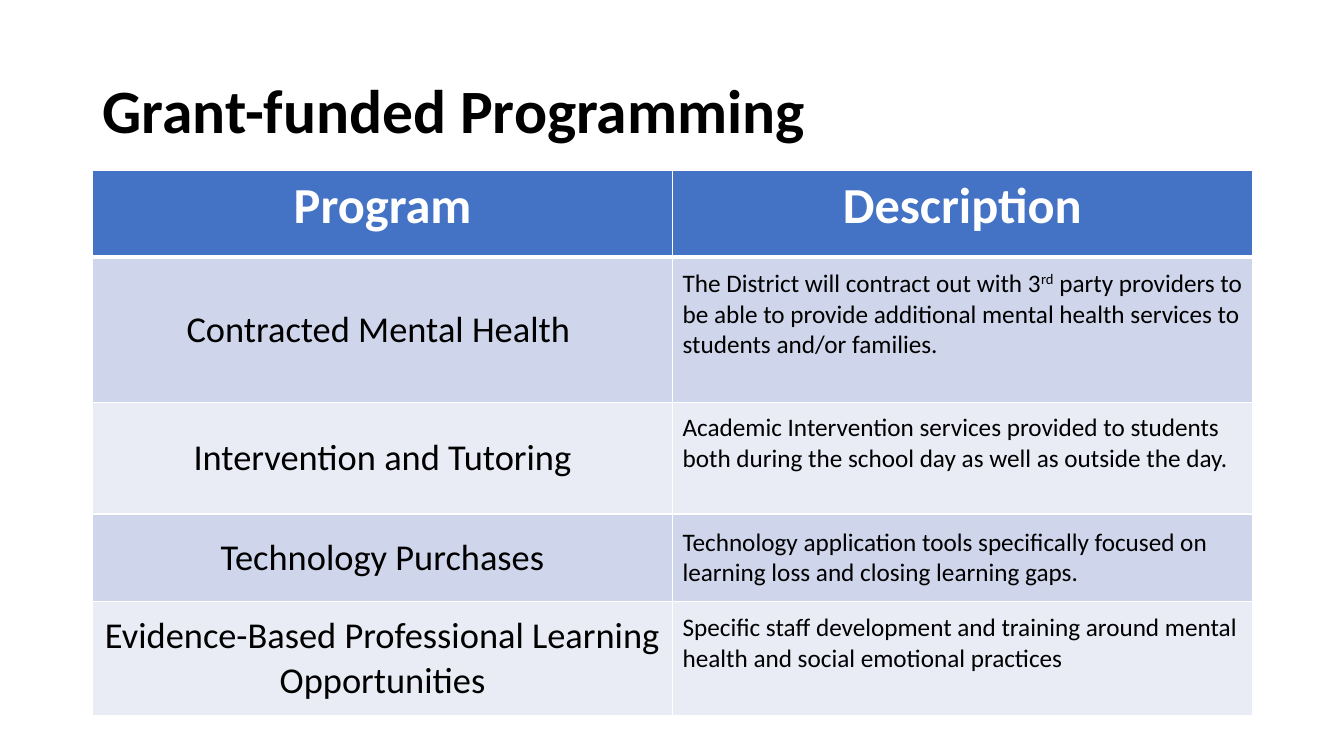
import pptx
import pptx.util
import pptx.dml.color
import pptx.enum.text
import pptx.oxml
import pptx.oxml.ns
from dataclasses import dataclass

Inches = pptx.util.Inches
ALIGN = pptx.enum.text.PP_ALIGN
ANCHOR = pptx.enum.text.MSO_ANCHOR


@dataclass(frozen=True)
class Theme:
    font: str = "Calibri"
    ink: str = "000000"
    white: str = "FFFFFF"
    header: str = "4472C4"
    bands: tuple = ("CFD5EA", "E9EBF5")
    title_size: int = 44
    header_size: int = 36
    program_size: int = 26
    description_size: int = 18
    rule: int = 1
    header_rule: int = 3


THEME = Theme()
HEADINGS = ("Program", "Description")
# Program, description runs, extra space below the description in inches
PROGRAMS = [
    ("Contracted Mental Health ",
     ("The District will contract out with 3", ("rd", 30),
      " party providers to be able to provide additional mental health "
      "services to students and/or families."), 0.3),
    ("Intervention and Tutoring",
     ("Academic Intervention services provided to students both during "
      "the school day as well as outside the day.",), 0.3),
    ("Technology Purchases",
     ("Technology application tools specifically focused on learning loss "
      "and closing learning gaps.",), 0),
    ("Evidence-Based Professional Learning Opportunities",
     ("Specific staff development and training around mental health and "
      "social emotional practices",), 0.3),
]
ROW_HEIGHTS = (0.86, 1.44, 1.11, 0.87, 1.13)


def rgb(color):
    return pptx.dml.color.RGBColor.from_string(color)


def write(tf, text, size, color=THEME.ink, bold=False, align=ALIGN.LEFT,
          line_spacing=None):
    """Fill tf with one paragraph; a run is a string or (string, raise in %)."""
    p = tf.paragraphs[0]
    p.alignment = align
    p.line_spacing = line_spacing
    for part in (text,) if isinstance(text, str) else text:
        words, raised = (part, 0) if isinstance(part, str) else part
        r = p.add_run()
        r.text = words
        r.font.name = THEME.font
        r.font.size = pptx.util.Pt(size)
        r.font.bold = bold
        r.font.color.rgb = rgb(color)
        if raised:
            r._r.get_or_add_rPr().set("baseline", str(raised * 1000))


def style_cell(cell, fill, top, bottom):
    """Set the fill and the white borders, whose widths are in points."""
    cell.fill.solid()
    cell.fill.fore_color.rgb = rgb(fill)
    tcPr = cell._tc.get_or_add_tcPr()
    sides = (("L", THEME.rule), ("R", THEME.rule), ("T", top), ("B", bottom))
    for i, (side, width) in enumerate(sides):
        tcPr.insert(i, pptx.oxml.parse_xml(
            f'<a:ln{side} {pptx.oxml.ns.nsdecls("a")} w="{pptx.util.Pt(width)}">'
            f'<a:solidFill><a:srgbClr val="{THEME.white}"/></a:solidFill>'
            f'</a:ln{side}>'))


def add_title(slide, text, left, top, width, height):
    tf = slide.shapes.add_textbox(
        Inches(left), Inches(top), Inches(width), Inches(height)).text_frame
    tf.word_wrap = True
    tf.vertical_anchor = ANCHOR.MIDDLE
    write(tf, text, THEME.title_size, bold=True, line_spacing=0.9)


def add_program_table(slide, left, top, width):
    table = slide.shapes.add_table(
        len(ROW_HEIGHTS), len(HEADINGS), Inches(left), Inches(top),
        Inches(width), Inches(sum(ROW_HEIGHTS))).table
    for row, height in zip(table.rows, ROW_HEIGHTS):
        row.height = Inches(height)
    for column in table.columns:
        column.width = Inches(width / len(HEADINGS))

    for c, heading in enumerate(HEADINGS):
        cell = table.cell(0, c)
        style_cell(cell, THEME.header, THEME.rule, THEME.header_rule)
        write(cell.text_frame, heading, THEME.header_size, color=THEME.white,
              bold=True, align=ALIGN.CENTER)

    for i, (program, description, space_below) in enumerate(PROGRAMS):
        name_cell, text_cell = table.cell(i + 1, 0), table.cell(i + 1, 1)
        for cell in (name_cell, text_cell):
            style_cell(cell, THEME.bands[i % 2],
                       THEME.rule if i else THEME.header_rule, THEME.rule)
            cell.vertical_anchor = ANCHOR.MIDDLE
        write(name_cell.text_frame, program, THEME.program_size,
              align=ALIGN.CENTER)
        write(text_cell.text_frame, description, THEME.description_size)
        text_cell.margin_bottom = Inches(0.05 + space_below)


def main():
    prs = pptx.Presentation()
    prs.slide_width, prs.slide_height = Inches(13.33), Inches(7.5)
    slide = prs.slides.add_slide(prs.slide_layouts[6])
    add_title(slide, "Grant-funded Programming", 0.92, 0.4, 11.5, 1.45)
    add_program_table(slide, 0.92, 1.69, 11.5)
    prs.save("out.pptx")


if __name__ == "__main__":
    main()
